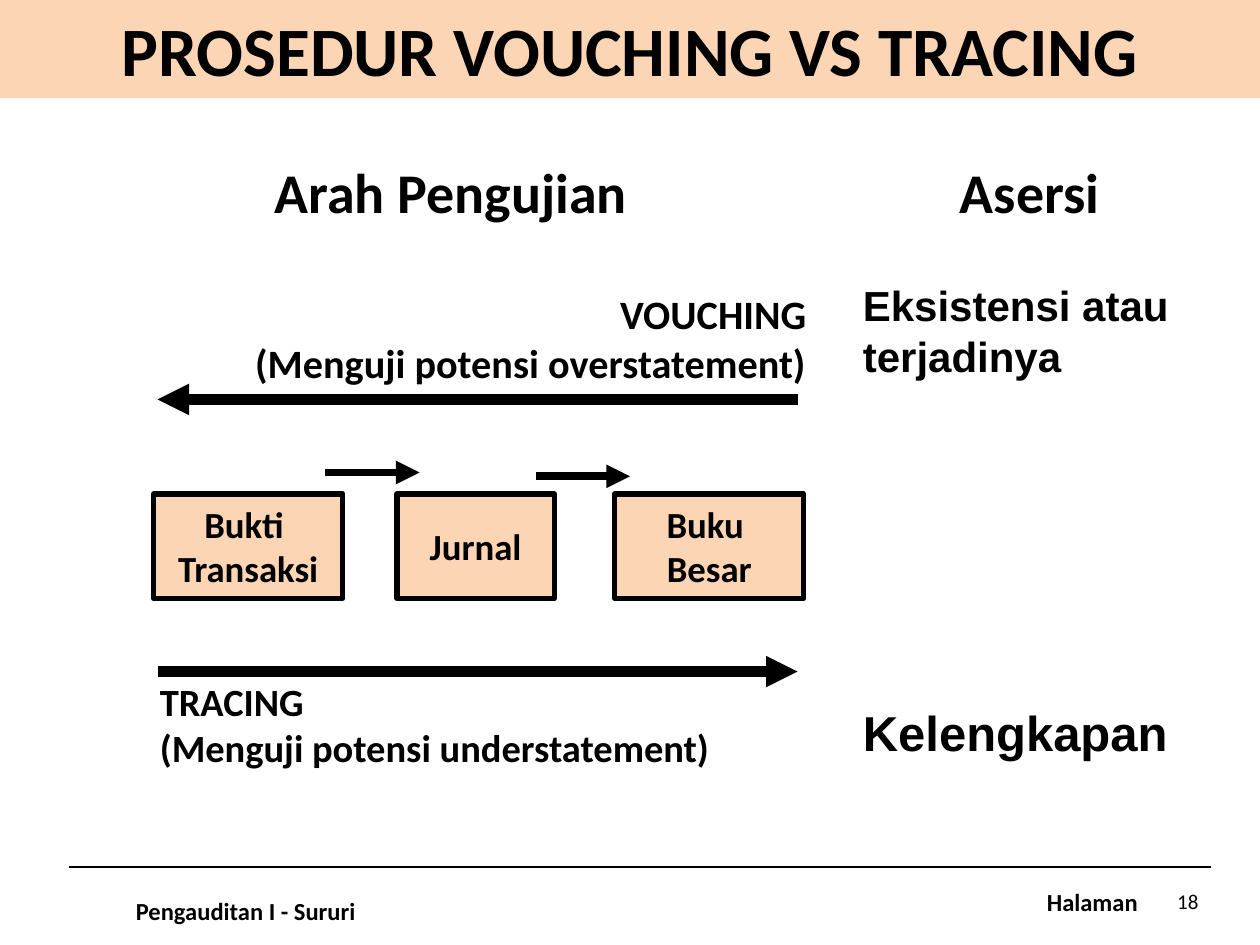
from lxml.etree import SubElement
from pptx import Presentation
from pptx.dml.color import RGBColor
from pptx.enum.shapes import MSO_CONNECTOR, MSO_SHAPE
from pptx.enum.text import MSO_ANCHOR, PP_ALIGN
from pptx.oxml.ns import qn
from pptx.util import Pt

PX = 9144
BLACK = RGBColor(0, 0, 0)
PEACH = RGBColor(0xFC, 0xD5, 0xB5)
LEFT, MID, RIGHT = PP_ALIGN.LEFT, PP_ALIGN.CENTER, PP_ALIGN.RIGHT
TOP, CENTER = MSO_ANCHOR.TOP, MSO_ANCHOR.MIDDLE

deck = Presentation()
deck.slide_width, deck.slide_height = 1000 * PX, 750 * PX
slide = deck.slides.add_slide(deck.slide_layouts[6])
shapes = slide.shapes


def write(shape, lines, size, align=LEFT, wrap=True, anchor=TOP, font="Calibri", bold=True):
    frame = shape.text_frame
    frame.word_wrap = wrap
    frame.vertical_anchor = anchor
    for i, line in enumerate(lines):
        para = frame.add_paragraph() if i else frame.paragraphs[0]
        para.alignment = align
        run = para.add_run()
        run.text = line
        run.font.name = font
        run.font.size = Pt(size)
        run.font.bold = bold
        run.font.color.rgb = BLACK


def draw(start, end, y, width, arrow=True):
    line = shapes.add_connector(MSO_CONNECTOR.STRAIGHT, start * PX, y * PX, end * PX, y * PX)
    line.line.color.rgb = BLACK
    line.line.width = Pt(width)
    if arrow:
        SubElement(line.line._get_or_add_ln(), qn("a:tailEnd"), type="triangle")
    SubElement(line._element.spPr, qn("a:effectLst"))


blocks = [
    (0, 0, 1000, 78, ["PROSEDUR VOUCHING VS TRACING"], 39.6, True),
    (122, 392, 150, 83, ["Bukti ", "Transaksi"], 21, False),
    (315, 392, 125, 83, ["Jurnal"], 21, False),
    (488, 392, 150, 83, ["Buku ", "Besar"], 21, False),
]
for x, y, w, h, lines, size, title in blocks:
    box = shapes.add_shape(MSO_SHAPE.RECTANGLE, x * PX, y * PX, w * PX, h * PX)
    box.shadow.inherit = False
    box.fill.solid()
    box.fill.fore_color.rgb = PEACH
    if title:
        box.line.fill.background()
    else:
        box.line.color.rgb = BLACK
        box.line.width = Pt(3)
    write(box, lines, size, MID, wrap=title, anchor=CENTER)

labels = [
    (208, 120, 346, 63, ["Arah Pengujian"], 32, {"wrap": False}),
    (752, 120, 156, 63, ["Asersi"], 32, {"wrap": False}),
    (125, 225, 525, 87, ["VOUCHING", "(Menguji potensi overstatement)"], 23, {"align": RIGHT}),
    (117, 533, 525, 83, ["TRACING", "(Menguji potensi understatement)"], 22, {}),
    (675, 217, 270, 91, ["Eksistensi atau", "terjadinya"], 24, {"font": "Arial"}),
    (675, 553, 308, 57, ["Kelengkapan"], 28, {"font": "Arial"}),
    (98, 706, 200, 34, ["Pengauditan I - Sururi"], 14, {"wrap": False}),
    (821, 699, 93, 34, ["Halaman"], 14, {"wrap": False}),
    (914, 695, 47, 40, ["18"], 12, {"align": RIGHT, "anchor": CENTER, "bold": False}),
]
for x, y, w, h, lines, size, style in labels:
    label = shapes.add_textbox(x * PX, y * PX, w * PX, h * PX)
    write(label, lines, size, **style)

draw(633, 125, 317, 6)
draw(125, 633, 533, 6)
draw(258, 333, 375, 4.5)
draw(425, 500, 378, 4.5)
draw(55, 961, 688, 1.5, arrow=False)

deck.save("out.pptx")
